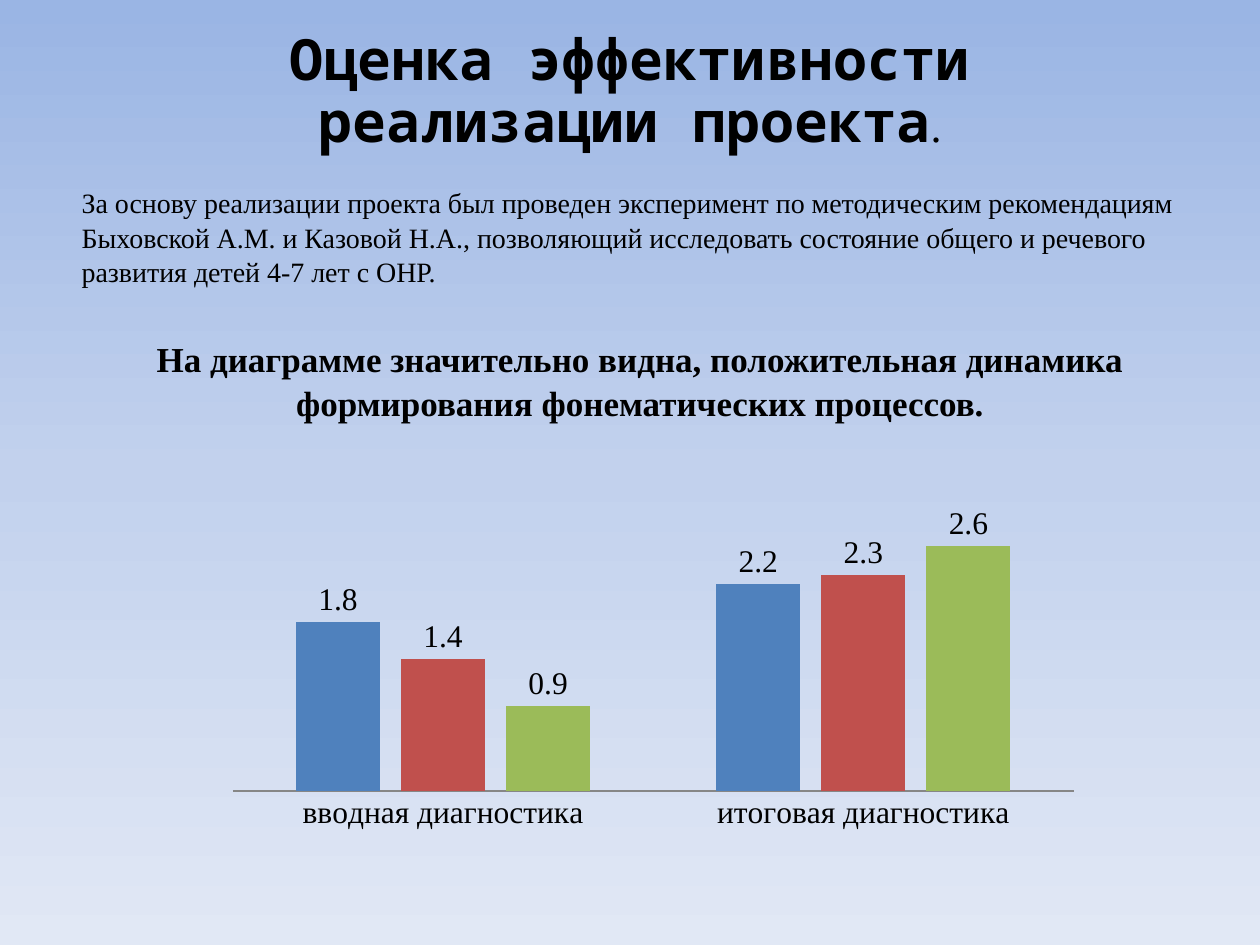
import pptx
import pptx.chart.data
import pptx.dml.color
import pptx.enum.chart
import pptx.enum.text
import pptx.oxml
import pptx.util
from pptx.util import Inches

SERIF = "Times New Roman"
BLACK = "000000"


def color(hex_string):
    return pptx.dml.color.RGBColor.from_string(hex_string)


def format_font(font, name, size, bold=False):
    font.name = name
    font.size = pptx.util.Pt(size)
    font.bold = bold
    font.color.rgb = color(BLACK)


presentation = pptx.Presentation()
presentation.slide_width = Inches(10)
presentation.slide_height = Inches(7.5)
slide = presentation.slides.add_slide(presentation.slide_layouts[6])

# Background: three-stop vertical gradient
fill = slide.background.fill
fill.gradient()
gradient = slide.background._cSld.bg.bgPr.find(pptx.oxml.ns.qn("a:gradFill"))
for child in list(gradient):
    gradient.remove(child)
stops = "".join(
    f'<a:gs pos="{position * 1000}"><a:srgbClr val="{value}"/></a:gs>'
    for position, value in [(0, "9AB5E4"), (50, "C2D1ED"), (100, "E1E8F5")]
)
namespace = pptx.oxml.ns.nsdecls("a")
gradient.append(pptx.oxml.parse_xml(f"<a:gsLst {namespace}>{stops}</a:gsLst>"))
gradient.append(pptx.oxml.parse_xml(f'<a:lin {namespace} ang="5400000" scaled="0"/>'))

# Title
title = slide.shapes.add_textbox(Inches(0.75), Inches(0.39), Inches(8.5), Inches(0.7))
title.text_frame.word_wrap = True
title.text_frame.vertical_anchor = pptx.enum.text.MSO_ANCHOR.MIDDLE
paragraph = title.text_frame.paragraphs[0]
paragraph.alignment = pptx.enum.text.PP_ALIGN.CENTER
paragraph.line_spacing = 0.9
for text, name, size, bold in [
    ("Оценка эффективности реализации проекта", "Noto Sans Mono", 32.4, True),
    (".", SERIF, 25.2, False),
]:
    run = paragraph.add_run()
    run.text = text
    format_font(run.font, name, size, bold)

# Introduction and chart heading
body = slide.shapes.add_textbox(Inches(0.55), Inches(1.41), Inches(9.06), Inches(5.7))
body.text_frame.word_wrap = True
body.text_frame.text = (
    "За основу реализации проекта был проведен эксперимент по методическим "
    "рекомендациям Быховской А.М. и Казовой Н.А., позволяющий исследовать "
    "состояние общего и речевого развития детей 4-7 лет с ОНР.\n"
    "На диаграмме значительно видна, положительная динамика формирования "
    "фонематических процессов."
)
introduction, heading = body.text_frame.paragraphs
format_font(introduction.runs[0].font, SERIF, 16)
format_font(heading.runs[0].font, SERIF, 20, bold=True)
heading.alignment = pptx.enum.text.PP_ALIGN.CENTER
heading.space_before = pptx.util.Pt(27)
for paragraph in (introduction, heading):
    paragraph.line_spacing = 1.04

# Diagnostics chart
chart_data = pptx.chart.data.CategoryChartData()
chart_data.categories = ["вводная диагностика", "итоговая диагностика"]
chart_data.add_series("Series 1", (1.8, 2.2))
chart_data.add_series("Series 2", (1.4, 2.3))
chart_data.add_series("Series 3", (0.9, 2.6))
chart = slide.shapes.add_chart(
    pptx.enum.chart.XL_CHART_TYPE.COLUMN_CLUSTERED,
    Inches(1.64), Inches(3.59), Inches(6.95), Inches(3.2), chart_data,
).chart
chart.has_legend = False
chart.has_title = False
format_font(chart.font, "Calibri", 18)

category_axis = chart.category_axis
category_axis.major_tick_mark = pptx.enum.chart.XL_TICK_MARK.NONE
category_axis.format.line.color.rgb = color("868686")
category_axis.format.line.width = pptx.util.Pt(0.75)
format_font(category_axis.tick_labels.font, SERIF, 18)

value_axis = chart.value_axis
value_axis.visible = False
value_axis.has_major_gridlines = False
value_axis.minimum_scale = 0
value_axis.maximum_scale = 3

plot = chart.plots[0]
plot.gap_width = 150
plot.overlap = -25
plot.vary_by_categories = False
for series, value in zip(plot.series, ["4F81BD", "C0504D", "9BBB59"]):
    series.format.fill.solid()
    series.format.fill.fore_color.rgb = color(value)
    labels = series.data_labels
    labels.show_value = True
    labels.position = pptx.enum.chart.XL_LABEL_POSITION.OUTSIDE_END
    format_font(labels.font, SERIF, 18)

# Fixed inner plot area
plot_area = chart._chartSpace.chart.plotArea
for layout in plot_area.findall(pptx.oxml.ns.qn("c:layout")):
    plot_area.remove(layout)
frame = "".join(
    f'<c:{tag} val="{value}"/>'
    for tag, value in [
        ("layoutTarget", "inner"), ("xMode", "edge"), ("yMode", "edge"),
        ("x", 0.03), ("y", 0.14), ("w", 0.96), ("h", 0.7),
    ]
)
plot_area.insert(0, pptx.oxml.parse_xml(
    f'<c:layout {pptx.oxml.ns.nsdecls("c")}><c:manualLayout>{frame}</c:manualLayout></c:layout>'
))

presentation.save("out.pptx")
